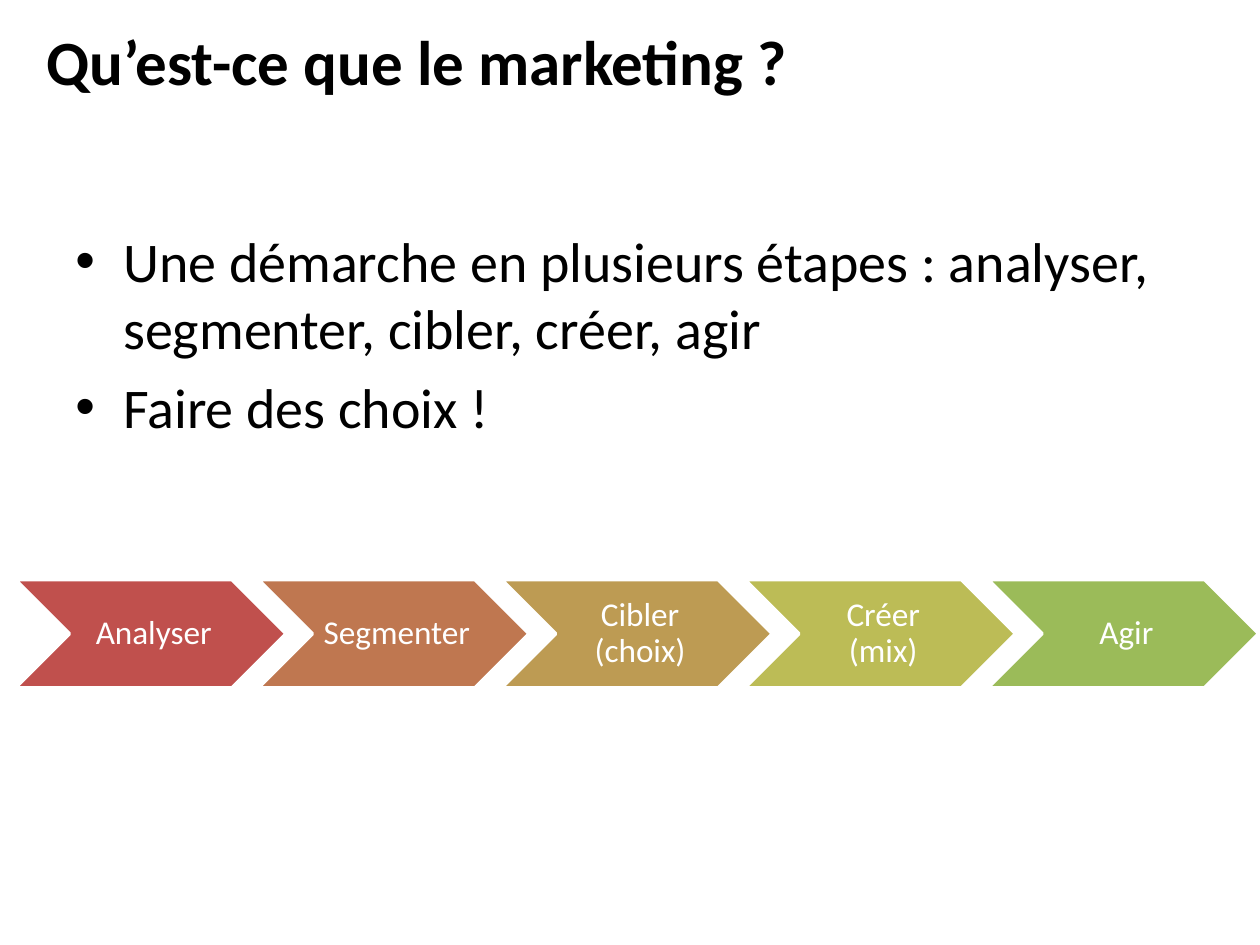
from typing import NamedTuple

import pptx
import pptx.dml.color
import pptx.enum.shapes
import pptx.enum.text
import pptx.oxml
import pptx.oxml.ns
import pptx.util

Inches = pptx.util.Inches
Pt = pptx.util.Pt
ALIGN = pptx.enum.text.PP_ALIGN
ANCHOR = pptx.enum.text.MSO_ANCHOR

FONT = "Calibri"
BLACK = "000000"
WHITE = "FFFFFF"

STEP_LEFT, STEP_TOP = 0.12, 4.6
STEP_WIDTH, STEP_HEIGHT = 2.15, 0.86
STEP_PITCH = 1.93


class Step(NamedTuple):
    label: str
    fill: str


STEPS = [
    Step("Analyser", "C0504D"),
    Step("Segmenter", "BF7750"),
    Step("Cibler (choix)", "BD9B53"),
    Step("Créer\v(mix)", "BCBC56"),
    Step("Agir", "9BBB59"),
]
POINTS = [
    "Une démarche en plusieurs étapes : analyser, segmenter, cibler, créer, agir",
    "Faire des choix !",
]


def rgb(value: str) -> pptx.dml.color.RGBColor:
    return pptx.dml.color.RGBColor.from_string(value)


def style(paragraph, size: float, color: str, bold: bool = False) -> None:
    font = paragraph.font
    font.name, font.size, font.bold = FONT, Pt(size), bold
    font.color.rgb = rgb(color)


def add_bullet(paragraph) -> None:
    properties = paragraph._p.get_or_add_pPr()
    properties.set("marL", str(Inches(0.38)))
    properties.set("indent", str(Inches(-0.38)))
    namespace = pptx.oxml.ns.nsdecls("a")
    for xml in (f'<a:buFont {namespace} typeface="Arial"/>',
                f'<a:buChar {namespace} char="•"/>'):
        properties.append(pptx.oxml.parse_xml(xml))


def set_title(slide, text: str) -> None:
    title = slide.shapes.title
    title.left, title.top = Inches(0.27), Inches(0.13)
    title.width, title.height = Inches(7.17), Inches(1.25)
    frame = title.text_frame
    frame.text = text
    frame.vertical_anchor = ANCHOR.TOP
    frame.paragraphs[0].alignment = ALIGN.LEFT
    style(frame.paragraphs[0], 36, BLACK, bold=True)


def add_points(slide, points: list[str]) -> None:
    body = slide.shapes.add_textbox(Inches(0.5), Inches(1.75), Inches(9), Inches(4.95))
    frame = body.text_frame
    frame.word_wrap = True
    frame.text = "\n".join(points)
    for index, paragraph in enumerate(frame.paragraphs):
        add_bullet(paragraph)
        if index:
            paragraph.space_before = Pt(6.4)
        style(paragraph, 32, BLACK)


def add_step(slide, step: Step, left: float) -> None:
    chevron = slide.shapes.add_shape(
        pptx.enum.shapes.MSO_SHAPE.CHEVRON,
        Inches(left), Inches(STEP_TOP), Inches(STEP_WIDTH), Inches(STEP_HEIGHT))
    chevron.shadow.inherit = False
    chevron.fill.solid()
    chevron.fill.fore_color.rgb = rgb(step.fill)
    chevron.line.color.rgb = rgb(WHITE)
    chevron.line.width = Pt(2)
    frame = chevron.text_frame
    frame.word_wrap = True
    frame.vertical_anchor = ANCHOR.MIDDLE
    frame.margin_left = Inches(0.08)
    frame.margin_top = frame.margin_right = frame.margin_bottom = Inches(0.03)
    frame.text = step.label
    label = frame.paragraphs[0]
    label.alignment = ALIGN.CENTER
    label.line_spacing = 0.9
    style(label, 19, WHITE)


def main() -> None:
    presentation = pptx.Presentation()
    presentation.slide_width, presentation.slide_height = Inches(10), Inches(7.5)
    slide = presentation.slides.add_slide(presentation.slide_layouts[5])
    set_title(slide, "Qu’est-ce que le marketing ?")
    add_points(slide, POINTS)
    for index, step in enumerate(STEPS):
        add_step(slide, step, STEP_LEFT + index * STEP_PITCH)
    presentation.save("out.pptx")


if __name__ == "__main__":
    main()
